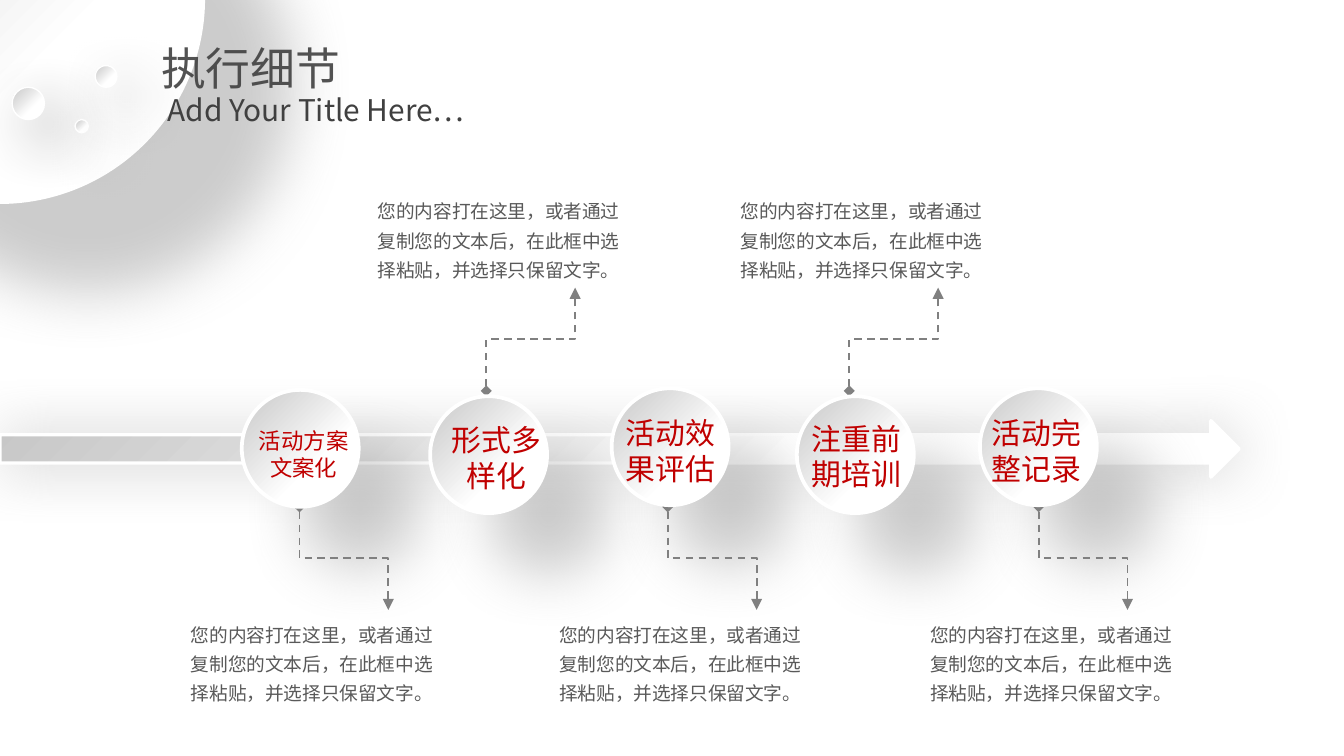
from lxml.etree import SubElement
from pptx import Presentation
from pptx.dml.color import RGBColor
from pptx.enum.dml import MSO_LINE
from pptx.enum.shapes import MSO_CONNECTOR, MSO_SHAPE
from pptx.enum.text import MSO_ANCHOR, MSO_AUTO_SIZE, PP_ALIGN
from pptx.oxml import parse_xml
from pptx.oxml.ns import nsdecls, qn
from pptx.util import Cm, Pt

FONT = "Noto Sans CJK SC"
COLORS = {"white": "FFFFFF", "shade": "C7C7C7", "title": "404040", "note": "595959",
          "label": "C00000", "line": "808080", "glow": "808080", "dark": "000000"}

# Content
TITLE = "执行细节"
SUB = "Add Your Title Here…"
NOTE = "您的内容打在这里，或者通过复制您的文本后，在此框中选择粘贴，并选择只保留文字。"
MID, LEFT = PP_ALIGN.CENTER, PP_ALIGN.LEFT
# label lines, size, alignment, ball corner, label corner, link x (cm)
STEPS = [
    (["活动方案", "文案化"], 12, MID, (4.57, 7.37), (4.62, 7.95), 5.66),
    (["形式多", "样化"], 16, MID, (8.13, 7.49), (8.26, 7.85), 9.19),
    (["活动效", "果评估"], 16, LEFT, (11.56, 7.34), (11.58, 7.72), 12.62),
    (["注重前", "期培训"], 16, LEFT, (15.06, 7.49), (15.09, 7.82), 16.05),
    (["活动完", "整记录"], 16, LEFT, (18.52, 7.34), (18.49, 7.72), 19.63),
]
DOTS = [(0.23, 1.65, 0.61), (1.42, 2.26, 0.25), (1.8, 1.24, 0.41)]  # x, y, size

# Sizes (cm)
BALL = 2.21
RUN, RISE = 1.68, 1.95
NOTE_W, NOTE_H = 5.26, 1.85
LOW = {"start": 9.58, "note": 11.56, "rot": 270, "way": 1}
HIGH = {"start": 7.39, "note": 3.56, "rot": 90, "way": -1}

deck = Presentation()
deck.slide_width, deck.slide_height = Cm(25.4), Cm(14.29)
slide = deck.slides.add_slide(deck.slide_layouts[5])
shapes = slide.shapes


def rgb(name):
    return RGBColor.from_string(COLORS[name])


def box(*sides):
    return [Cm(side) for side in sides]


def add_solid(kind, area, width, shadow):
    """Add a shape with the soft gradient and an outer shadow."""
    shape = shapes.add_shape(kind, *box(*area))
    shape.fill.gradient()
    stops = "".join(f'<a:gs pos="{pos}000"><a:srgbClr val="{COLORS[name]}"/></a:gs>'
                    for pos, name in [(0, "white"), (36, "white"), (100, "shade")])
    props = shape.element.spPr
    props.replace(props.find(qn("a:gradFill")), parse_xml(
        f'<a:gradFill {nsdecls("a")} rotWithShape="1"><a:gsLst>{stops}</a:gsLst>'
        f'<a:lin ang="{225 * 60000}" scaled="0"/></a:gradFill>'))
    shape.line.color.rgb = rgb("white")
    shape.line.width = Pt(width)
    shape.shadow.inherit = False
    name, alpha, blur, dist, turn = shadow
    props.find(qn("a:effectLst")).append(parse_xml(
        f'<a:outerShdw {nsdecls("a")} blurRad="{Pt(blur)}" dist="{Pt(dist)}" '
        f'dir="{turn * 60000}" algn="tl" rotWithShape="0">'
        f'<a:srgbClr val="{COLORS[name]}"><a:alpha val="{alpha}000"/></a:srgbClr>'
        f'</a:outerShdw>'))
    return shape


def fill_text(frame, lines, size, color, align=LEFT, space=None, wrap=True):
    frame.word_wrap = wrap
    frame.auto_size = MSO_AUTO_SIZE.SHAPE_TO_FIT_TEXT
    frame.vertical_anchor = MSO_ANCHOR.TOP
    for i, line in enumerate(lines):
        para = frame.add_paragraph() if i else frame.paragraphs[0]
        para.alignment = align
        if space:
            para.line_spacing = space
        run = para.add_run()
        run.text = line
        run.font.size = Pt(size)
        run.font.name = FONT
        run.font.color.rgb = rgb(color)
        SubElement(run.font._element, qn("a:ea")).set("typeface", FONT)


def add_link(x, side):
    """Add a dashed elbow that leaves the ball vertically."""
    mid_x, mid_y = x + RUN / 2, side["start"] + side["way"] * RISE / 2
    tilt = -side["way"] * RUN / 2
    link = shapes.add_connector(MSO_CONNECTOR.ELBOW, *box(
        mid_x + RISE / 2, mid_y + tilt, mid_x - RISE / 2, mid_y - tilt))
    props = link.element.spPr
    props.find(qn("a:xfrm")).set("rot", str(side["rot"] * 60000))
    link.line.color.rgb = rgb("line")
    link.line.width = Pt(1)
    link.line.dash_style = MSO_LINE.DASH
    edge = props.find(qn("a:ln"))
    SubElement(edge, qn("a:headEnd")).set("type", "diamond")
    SubElement(edge, qn("a:tailEnd")).set("type", "triangle")
    SubElement(props, qn("a:effectLst"))


# Corner moon
add_solid(MSO_SHAPE.OVAL, (-3.86, -3.88, 7.7, 7.7), 2, ("glow", 40, 33, 66, 45))
for x, y, size in DOTS:
    add_solid(MSO_SHAPE.OVAL, (x, y, size, size), 0.75, ("dark", 45, 33, 15, 45))

# Title, brought in front of the moon
title = shapes.title
title.left, title.top, title.width, title.height = box(2.79, 0.38, 8.51, 1.42)
fill_text(title.text_frame, [TITLE], 24, "title", space=1.25)
tint = next(title.element.iter(qn("a:srgbClr")))
SubElement(tint, qn("a:alpha")).set("val", "90000")
title.element.getparent().append(title.element)
sub = shapes.add_textbox(*box(2.92, 1.47, 8.26, 1.02))
fill_text(sub.text_frame, [SUB], 16, "title", space=1.2)

# Arrow bar
add_solid(MSO_SHAPE.RIGHT_ARROW, (0, 7.95, 23.42, 1.07), 1.75, ("glow", 40, 33, 0, 0))

# Links and notes, below and above in turn
for i, step in enumerate(STEPS):
    side = HIGH if i % 2 else LOW
    x = step[-1]
    add_link(x, side)
    frame = shapes.add_textbox(*box(x - 2.23, side["note"], NOTE_W, NOTE_H)).text_frame
    frame.margin_left = frame.margin_right = Cm(0.18)
    frame.margin_top = frame.margin_bottom = Cm(0.1)
    fill_text(frame, [NOTE], 10, "note", space=1.3)

# Balls and labels
for lines, size, align, ball, spot, _ in STEPS:
    add_solid(MSO_SHAPE.OVAL, (*ball, BALL, BALL), 2, ("glow", 40, 33, 45, 45))
    label = shapes.add_textbox(*box(*spot, 2.24, 1.27 if size == 12 else 1.63))
    fill_text(label.text_frame, lines, size, "label", align, wrap=False)

deck.save("out.pptx")
